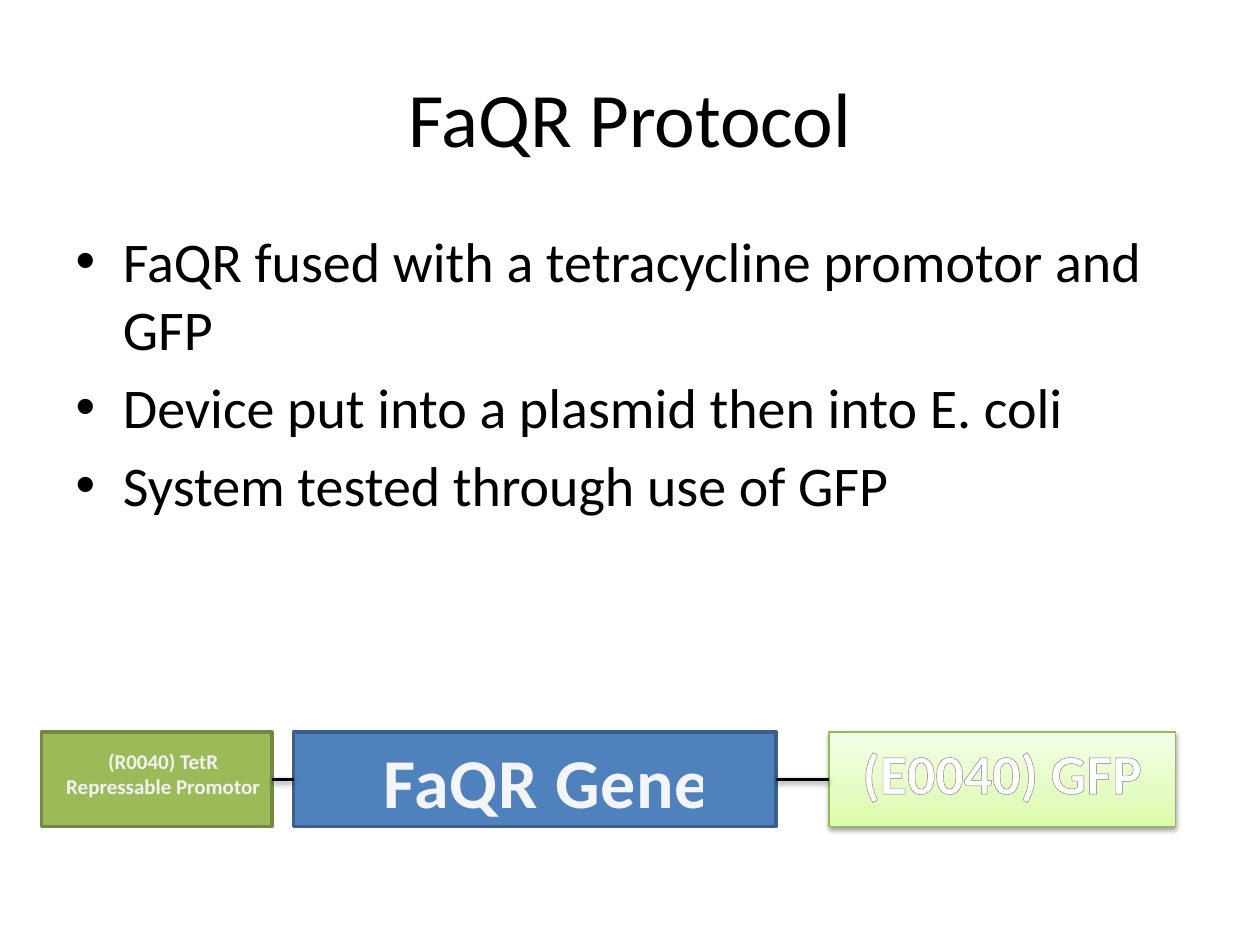
from lxml.etree import SubElement
from pptx import Presentation
from pptx.dml.color import RGBColor
from pptx.enum.shapes import MSO_CONNECTOR as Link, MSO_SHAPE as Shape
from pptx.enum.text import MSO_ANCHOR as Anchor, MSO_AUTO_SIZE as Fit, PP_ALIGN as Align
from pptx.oxml.ns import qn
from pptx.util import Inches, Pt

WIDTH, HEIGHT = Inches(10), Inches(7.5)
FACE = "Calibri"
BLACK = RGBColor(0x00, 0x00, 0x00)
GREEN = RGBColor(0x9B, 0xBB, 0x59)
GREEN_EDGE = RGBColor(0x73, 0x8A, 0x42)
BLUE = RGBColor(0x4F, 0x81, 0xBD)
BLUE_EDGE = RGBColor(0x3A, 0x5F, 0x8C)
LIME_EDGE = RGBColor(0x98, 0xB9, 0x55)
PALE = RGBColor(0xF2, 0xF2, 0xF2)
NEAR_WHITE = RGBColor(0xFC, 0xFC, 0xFD)
WHITE = RGBColor(0xFF, 0xFF, 0xFF)
GREY = RGBColor(0x7F, 0x7F, 0x7F)
GREY_EDGE = RGBColor(0x7D, 0x7D, 0x7D)
DARK_EDGE = RGBColor(0x10, 0x1A, 0x26)
LIME_STOPS = [(0, RGBColor(0xDA, 0xFD, 0xA7)), (35, RGBColor(0xE4, 0xFC, 0xC2)),
              (100, RGBColor(0xF5, 0xFF, 0xE7))]
SHINE_STOPS = [(0, WHITE), (9, WHITE), (50, GREY), (79, WHITE), (100, WHITE)]

TITLE = "FaQR Protocol"
POINTS = [
    "FaQR fused with a tetracycline promotor and GFP",
    "Device put into a plasmid then into E. coli",
    "System tested through use of GFP",
]
ROW_TOP, ROW_HEIGHT = 5.81, 0.75


def apply(target, values):
    """Set every attribute of the target named in the values."""
    for name, value in values.items():
        setattr(target, name, value)


def add_color(parent, color, alpha=100):
    """Append an RGB colour element with an opacity in percent."""
    node = SubElement(parent, qn("a:srgbClr"), val=str(color))
    if alpha < 100:
        SubElement(node, qn("a:alpha"), val=str(alpha * 1000))


def set_gradient(fill, owner, stops, angle):
    """Give the fill of the owner element a linear gradient."""
    fill.gradient()
    gradient = owner.find(qn("a:gradFill"))
    for child in list(gradient):
        gradient.remove(child)
    stop_list = SubElement(gradient, qn("a:gsLst"))
    for share, color in stops:
        add_color(SubElement(stop_list, qn("a:gs"), pos=str(share * 1000)), color)
    SubElement(gradient, qn("a:lin"), ang=str(angle * 60000), scaled="0")


def add_shadow(properties):
    """Append a soft shadow that falls straight down."""
    effects = SubElement(properties, qn("a:effectLst"))
    shadow = SubElement(effects, qn("a:outerShdw"), blurRad=str(Pt(3.1)),
                        dist=str(Pt(1.6)), dir="5400000", rotWithShape="0")
    add_color(shadow, BLACK, 38)


def add_part(page, left, width, fill, edge, weight):
    """Draw one part of the gene device, with a shadow if it has a gradient."""
    part = page.shapes.add_shape(Shape.RECTANGLE, Inches(left), Inches(ROW_TOP),
                                 Inches(width), Inches(ROW_HEIGHT))
    apply(part.line, {"width": Pt(weight)})
    part.line.color.rgb = edge
    if isinstance(fill, RGBColor):
        part.fill.solid()
        part.fill.fore_color.rgb = fill
        part.shadow.inherit = False
    else:
        set_gradient(part.fill, part.element.spPr, fill, 270)
        add_shadow(part.element.spPr)
    return part


def add_link(page, start, end):
    """Join the right side of one part to the left side of the next."""
    link = page.shapes.add_connector(Link.STRAIGHT, 0, 0, 0, 0)
    link.begin_connect(start, 3)
    link.end_connect(end, 1)
    link.line.width = Pt(2)
    link.line.color.rgb = BLACK
    add_shadow(link.element.spPr)


def add_outline(properties, color, weight, alpha=100):
    """Put an outline on the letters of a run."""
    outline = SubElement(properties, qn("a:ln"), w=str(Pt(weight)))
    add_color(SubElement(outline, qn("a:solidFill")), color, alpha)
    properties.insert(0, outline)


def add_label(page, frame, text, size, fill, outline, wrap=True, alpha=100, spacing=0):
    """Write a bold centred label with outlined letters."""
    box = page.shapes.add_textbox(*map(Inches, frame))
    apply(box.text_frame, {"word_wrap": wrap, "auto_size": Fit.SHAPE_TO_FIT_TEXT})
    para = box.text_frame.paragraphs[0]
    para.alignment = Align.CENTER
    span = para.add_run()
    span.text = text
    apply(span.font, {"name": FACE, "size": Pt(size), "bold": True})
    properties = span.font._element
    if isinstance(fill, RGBColor):
        span.font.color.rgb = fill
        if alpha < 100:
            color = properties.find(qn("a:solidFill")).find(qn("a:srgbClr"))
            SubElement(color, qn("a:alpha"), val=str(alpha * 1000))
    else:
        set_gradient(span.font.fill, properties, fill, 90)
    if spacing:
        properties.set("spc", str(int(spacing * 100)))
    add_outline(properties, *outline)


def fill_placeholder(holder, lines, top, height, size):
    """Place a template placeholder and write its lines."""
    apply(holder, {"left": int(WIDTH * 0.05), "top": Inches(top),
                   "width": int(WIDTH * 0.9), "height": Inches(height)})
    holder.text_frame.text = "\n".join(lines)
    for para in holder.text_frame.paragraphs:
        apply(para.font, {"name": FACE, "size": Pt(size)})
        para.font.color.rgb = BLACK


def main():
    """Build the protocol slide."""
    deck = Presentation()
    apply(deck, {"slide_width": WIDTH, "slide_height": HEIGHT})
    page = deck.slides.add_slide(deck.slide_layouts[1])
    title, body = page.placeholders
    fill_placeholder(title, [TITLE], 0.3, 1.25, 44)
    title.text_frame.vertical_anchor = Anchor.MIDDLE
    fill_placeholder(body, POINTS, 1.75, 4.95, 32)

    promotor = add_part(page, 0.33, 1.83, GREEN, GREEN_EDGE, 2)
    gene = add_part(page, 2.33, 3.83, BLUE, BLUE_EDGE, 2)
    reporter = add_part(page, 6.58, 2.75, LIME_STOPS, LIME_EDGE, 0.75)
    add_link(page, promotor, gene)
    add_link(page, gene, reporter)

    add_label(page, (0.42, 5.89, 1.75, 0.5), "(R0040) TetR Repressable Promotor",
              12, PALE, (GREY_EDGE, 0.83))
    add_label(page, (2.92, ROW_TOP, 2.84, 0.77), "FaQR Gene", 40, NEAR_WHITE,
              (DARK_EDGE, 1.06, 6), wrap=False, alpha=95, spacing=0.5)
    add_label(page, (6.25, ROW_TOP, 3.41, 0.64), "(E0040) GFP", 32, SHINE_STOPS,
              (GREY_EDGE, 0.83))
    deck.save("out.pptx")


if __name__ == "__main__":
    main()
